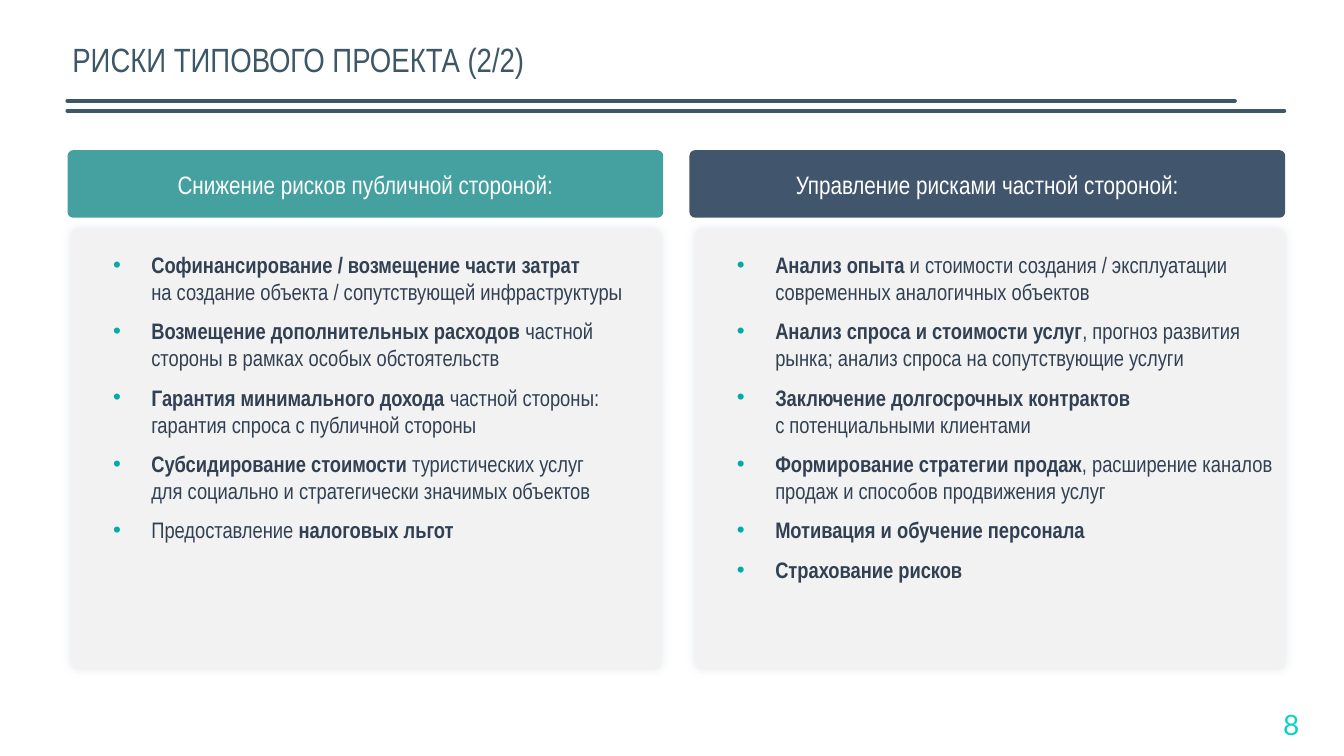
"""Build the slide on risks of a typical project: public and private side measures."""
from lxml import etree
from pptx import Presentation
from pptx.dml.color import RGBColor
from pptx.enum.shapes import MSO_CONNECTOR, MSO_SHAPE
from pptx.enum.text import MSO_ANCHOR as ANCHOR, PP_ALIGN as ALIGN
from pptx.oxml import parse_xml
from pptx.oxml.ns import nsdecls, qn
from pptx.util import Pt

COLORS = {
    "slate": "3C5765", "text": "314052", "panel": "F2F2F2", "white": "FFFFFF",
    "teal": "44A1A0", "navy": "41566D", "bullet": "01ABA8", "number": "0BD1C8",
    "shadow": "E4E8EE",
}
NARROW = "Arial Narrow"

COLUMNS = [
    (48.24, 50.4, "teal", "Снижение рисков публичной стороной:", [
        "*Софинансирование / возмещение части затрат*\n"
        "на создание объекта / сопутствующей инфраструктуры",
        "*Возмещение дополнительных расходов* частной стороны в рамках особых обстоятельств",
        "*Гарантия минимального дохода* частной стороны: гарантия спроса с публичной стороны",
        "*Субсидирование стоимости* туристических услуг\n"
        "для социально и стратегически значимых объектов",
        "Предоставление *налоговых льгот*",
    ]),
    (492.48, 496.08, "navy", "Управление рисками частной стороной:", [
        "*Анализ опыта* и стоимости создания / эксплуатации современных аналогичных объектов",
        "*Анализ спроса и стоимости услуг*, прогноз развития рынка; "
        "анализ спроса на сопутствующие услуги",
        "*Заключение долгосрочных контрактов*\nс потенциальными клиентами",
        "*Формирование стратегии продаж*, расширение каналов продаж "
        "и способов продвижения услуг",
        "*Мотивация и обучение персонала*",
        "*Страхование рисков*",
    ]),
]


def style(r, size, color, name=NARROW, bold=False):
    r.font.size, r.font.name, r.font.bold = Pt(size), name, bold
    r.font.color.rgb = RGBColor.from_string(COLORS[color])


def add_card(left, top, width, height, radius, color):
    sp = s.shapes.add_shape(MSO_SHAPE.ROUNDED_RECTANGLE, Pt(left), Pt(top), Pt(width), Pt(height))
    sp.adjustments[0] = radius
    sp.shadow.inherit = False
    sp.fill.solid()
    sp.fill.fore_color.rgb = RGBColor.from_string(COLORS[color])
    sp.line.fill.background()
    sp.text_frame.word_wrap = True
    return sp


prs = Presentation()
prs.slide_width, prs.slide_height = Pt(960), Pt(540)
s = prs.slides.add_slide(prs.slide_layouts[6])

for right, y in [(917.28, 79.2), (882, 72)]:
    rule = s.shapes.add_connector(MSO_CONNECTOR.STRAIGHT, Pt(48.24), Pt(y), Pt(right), Pt(y))
    rule.line.width = Pt(3)
    rule.line.color.rgb = RGBColor.from_string(COLORS["slate"])
    rule.line._get_or_add_ln().set("cap", "rnd")
    etree.SubElement(rule._element.spPr, qn("a:effectLst"))

for box, text, size, color, name, align, spacing in [
    ((44.64, 23.04, 828, 41.76), "РИСКИ ТИПОВОГО ПРОЕКТА (2/2)", 24, "slate", NARROW, ALIGN.LEFT, 0.9),
    ((719.28, 503.28, 216, 28.8), "8", 20, "number", "Lato", ALIGN.RIGHT, 1.0),
]:
    tf = s.shapes.add_textbox(*map(Pt, box)).text_frame
    tf.word_wrap = True
    tf.vertical_anchor = ANCHOR.MIDDLE
    p = tf.paragraphs[0]
    p.text = text
    p.alignment, p.line_spacing = align, spacing
    style(p.runs[0], size, color, name)

for header_left, panel_left, color, heading, items in COLUMNS:
    panel = add_card(panel_left, 163.44, 421.92, 314.64, 0.017, "panel")
    effects = panel._element.spPr.find(qn("a:effectLst"))
    effects.append(parse_xml(
        f'<a:outerShdw {nsdecls("a")} blurRad="76200" dist="0" algn="ctr" rotWithShape="0">'
        f'<a:srgbClr val="{COLORS["shadow"]}"/></a:outerShdw>'))
    tf = panel.text_frame
    tf.vertical_anchor = ANCHOR.TOP
    tf.margin_left, tf.margin_top, tf.margin_right, tf.margin_bottom = map(Pt, (0, 14.4, 7.2, 3.6))
    for i, item in enumerate(items):
        p = tf.add_paragraph() if i else tf.paragraphs[0]
        p.alignment, p.space_after = ALIGN.LEFT, Pt(9)
        pPr = p._p.get_or_add_pPr()
        pPr.set("marL", str(Pt(56.16)))
        pPr.set("indent", str(-Pt(27.36)))
        bullet_color = etree.SubElement(pPr, qn("a:buClr"))
        etree.SubElement(bullet_color, qn("a:srgbClr"), val=COLORS["bullet"])
        etree.SubElement(pPr, qn("a:buFont"), typeface="Arial")
        etree.SubElement(pPr, qn("a:buChar"), char="•")
        for j, part in enumerate(item.split("*")):
            for k, line in enumerate(part.split("\n")):
                if k:
                    p.add_line_break()
                if line:
                    r = p.add_run()
                    r.text = line
                    style(r, 16, "text", bold=j % 2 == 1)
        for br in p._p.findall(qn("a:br")):
            etree.SubElement(br, qn("a:rPr"), sz="1600")

    header = add_card(header_left, 107.28, 425.52, 48.24, 0.084, color)
    tf = header.text_frame
    tf.vertical_anchor = ANCHOR.MIDDLE
    p = tf.paragraphs[0]
    p.text = heading
    p.alignment = ALIGN.CENTER
    style(p.runs[0], 18, "white")

prs.save("out.pptx")
